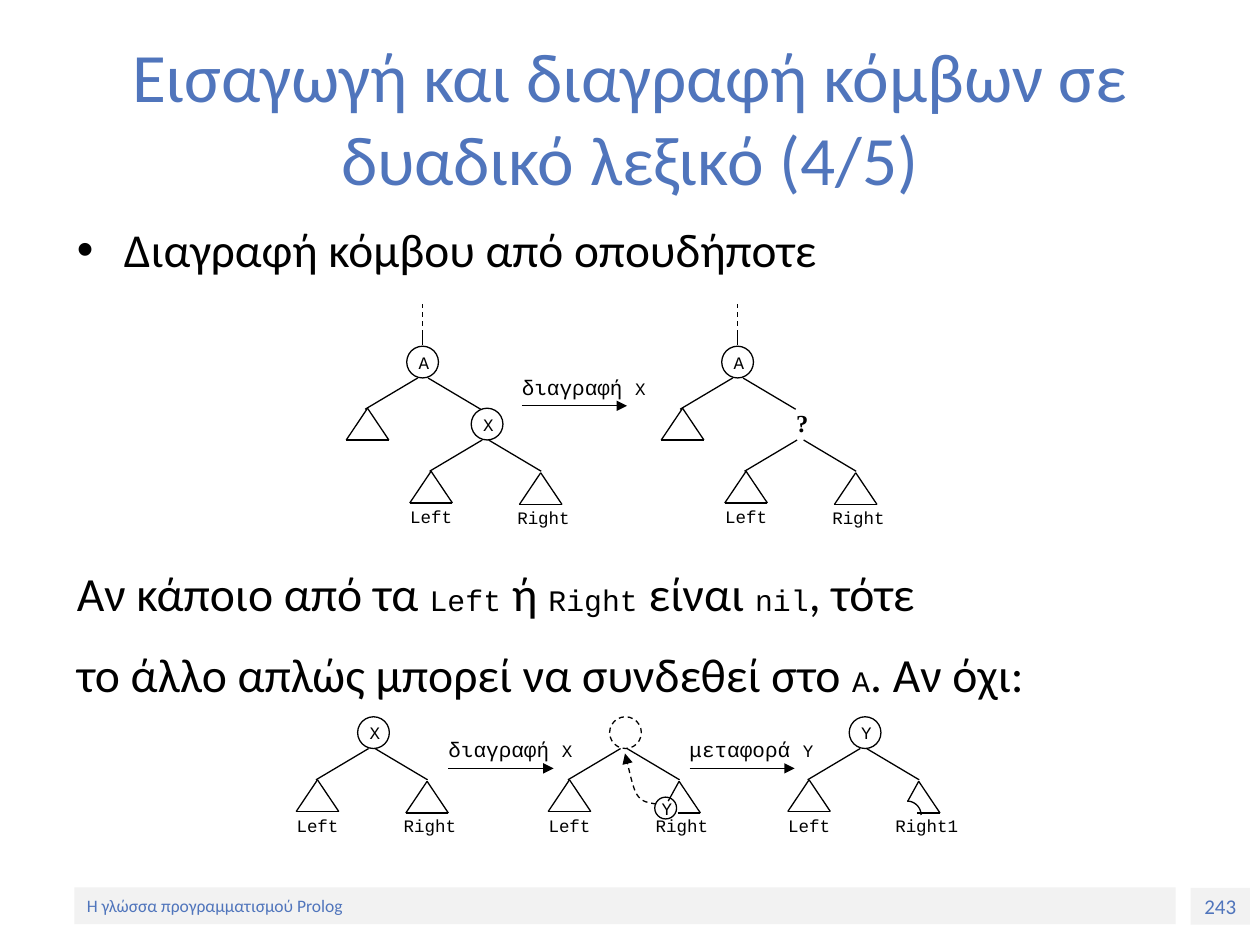
"""Builds the slide on deleting a node from a binary dictionary."""
from lxml.etree import SubElement
from pptx import Presentation
from pptx.dml.color import RGBColor
from pptx.enum.dml import MSO_LINE
from pptx.enum.shapes import MSO_CONNECTOR as Connector, MSO_SHAPE as Shape
from pptx.enum.text import MSO_ANCHOR as Anchor, MSO_AUTO_SIZE as AutoSize, PP_ALIGN as Align
from pptx.oxml.ns import qn
from pptx.util import Cm, Pt

BLACK, BLUE, GREY = "000000", "5075BC", "F2F2F2"
BODY, CODE, SERIF = "Calibri", "Courier New", "Times New Roman"
RADIUS = 0.32


def color(value):
    """Turn a hex string into a colour."""
    return RGBColor.from_string(value)


def add_runs(para, runs, ink=BLACK, bold=False):
    """Add (text, font, size) runs to a paragraph."""
    for words, font, size in runs:
        span = para.add_run()
        span.text = words
        span.font.name, span.font.size, span.font.bold = font, Pt(size), bold
        span.font.color.rgb = color(ink)


def add_text(page, area, *paragraphs, ink=BLACK, bold=False, anchor=Anchor.TOP,
             align=Align.LEFT, gap=0, grow=False):
    """Add a text box holding one list of runs per paragraph."""
    frame = page.shapes.add_textbox(*map(Cm, area)).text_frame
    frame.word_wrap = True
    frame.vertical_anchor = anchor
    if grow:
        frame.auto_size = AutoSize.SHAPE_TO_FIT_TEXT
    for index, runs in enumerate(paragraphs):
        para = frame.add_paragraph() if index else frame.paragraphs[0]
        para.alignment = align
        if index:
            para.space_before = Pt(gap)
        add_runs(para, runs, ink, bold)
    return frame


def add_bullet(para, indent):
    """Give a paragraph a hanging round bullet."""
    props = para._p.get_or_add_pPr()
    props.set("marL", str(Cm(indent)))
    props.set("indent", str(-Cm(indent)))
    SubElement(props, qn("a:buFont")).set("typeface", "Arial")
    SubElement(props, qn("a:buChar")).set("char", "•")


def add_bar(page, area, words, size, align):
    """Add a grey footer bar with blue text."""
    bar = page.shapes.add_shape(Shape.RECTANGLE, *map(Cm, area))
    bar.shadow.inherit = False
    bar.fill.solid()
    bar.fill.fore_color.rgb = color(GREY)
    bar.line.fill.background()
    frame = bar.text_frame
    frame.word_wrap = False
    frame.vertical_anchor = Anchor.MIDDLE
    frame.paragraphs[0].alignment = align
    add_runs(frame.paragraphs[0], [(words, BODY, size)], BLUE)


def draw_stroke(shape, dashed=False, arrow=False):
    """Style the thin black line of a shape or connector."""
    shape.line.color.rgb = color(BLACK)
    shape.line.width = Pt(0.75)
    if dashed:
        shape.line.dash_style = MSO_LINE.DASH
    if arrow:
        SubElement(shape.line._get_or_add_ln(), qn("a:tailEnd")).set("type", "triangle")


def add_line(page, start, end, dashed=False, arrow=False):
    """Add a straight line between two points."""
    line = page.shapes.add_connector(Connector.STRAIGHT, *map(Cm, (*start, *end)))
    draw_stroke(line, dashed, arrow)
    SubElement(line._element.spPr, qn("a:effectLst"))


def add_curve(page, start, *pieces, dashed=False, arrow=False, steps=12):
    """Add an open curve made of cubic pieces."""
    points = []
    first = start
    for piece in pieces:
        for step in range(1, steps + 1):
            t = step / steps
            weights = ((1 - t) ** 3, 3 * t * (1 - t) ** 2, 3 * t * t * (1 - t), t ** 3)
            points.append(tuple(Cm(sum(w * point[axis] for w, point in zip(weights, (first, *piece))))
                                for axis in (0, 1)))
        first = piece[-1]
    builder = page.shapes.build_freeform(Cm(start[0]), Cm(start[1]))
    builder.add_line_segments(points, close=False)
    curve = builder.convert_to_shape()
    curve.shadow.inherit = False
    curve.fill.background()
    draw_stroke(curve, dashed, arrow)


def add_label(page, x, y, words):
    """Add a small code label."""
    add_text(page, (x, y, 2.2, 0.69), [(words, CODE, 10)], grow=True)


def add_node(page, x, y, letter="", radius=RADIUS, dashed=False):
    """Add a circle centred on a point, with its letter."""
    node = page.shapes.add_shape(Shape.OVAL, *map(Cm, (x - radius, y - radius, 2 * radius, 2 * radius)))
    node.shadow.inherit = False
    node.fill.background()
    draw_stroke(node, dashed)
    if letter:
        add_text(page, (x - 0.33, y - 0.33, 0.84, 0.69), [(letter, CODE, 10)], grow=True)


def add_subtree(page, x, y, cut=False):
    """Add a triangle below its apex; a cut one lacks its left corner."""
    bottom = y + 0.64
    add_line(page, (x, y), (x - 0.22, y + 0.4) if cut else (x - 0.43, bottom))
    add_line(page, (x, y), (x + 0.43, bottom))
    add_line(page, (x - 0.03 if cut else x - 0.43, bottom), (x + 0.43, bottom))


def add_branches(page, x, y, offset=0.03):
    """Add the two branches below a node."""
    add_line(page, (x - 0.1, y + RADIUS), (x - 1.16, y + 0.95))
    add_line(page, (x + offset, y + RADIUS), (x + offset + 1.06, y + 0.95))


def add_children(page, x, y, right="Right", cut=False):
    """Add branches with labelled left and right subtrees."""
    add_branches(page, x, y)
    add_subtree(page, x - 1.13, y + 0.95)
    add_label(page, x - 1.8, y + 1.53, "Left")
    add_subtree(page, x + 1.08, y + 0.98, cut)
    add_label(page, x + 0.36, y + 1.54, right)


def add_parent(page, x, y):
    """Add node A with its stem, branches and left subtree."""
    add_line(page, (x, y - 0.34), (x, y - 0.55))
    add_line(page, (x, y - 0.55), (x, y - 1.18), dashed=True)
    add_node(page, x, y, "A")
    add_branches(page, x, y, 0.11)
    add_subtree(page, x - 1.11, y + 0.93)


def add_step(page, x, y, action, letter):
    """Add an arrow with the action written above it."""
    add_line(page, (x, y), (x + 2.12, y), arrow=True)
    add_text(page, (x - 0.25, y - 0.76, 3.5, 0.76),
             [(action + " ", CODE, 12), (letter, CODE, 10)], grow=True)


def add_deletion(page):
    """Draw the deletion of X below A."""
    for x in (8.52, 14.87):
        add_parent(page, x, 7.3)
        add_children(page, x + 1.3, 8.55)
    add_node(page, 9.82, 8.55, "X")
    add_text(page, (15.8, 8.1, 0.84, 0.84), [("?", SERIF, 14)], bold=True, grow=True)
    add_step(page, 10.52, 8.18, "διαγραφή", "X")


def add_replacement(page):
    """Draw the move of Y into the place of X."""
    y = 14.77
    for x, letter, right in ((7.53, "X", "Right"), (12.61, "", "Right"), (17.44, "Y", "Right1")):
        add_node(page, x, y, letter, dashed=not letter)
        add_children(page, x, y, right, cut=letter != "X")
    add_node(page, 13.42, 16.29, "Y", radius=0.22)
    add_step(page, 9.04, 15.49, "διαγραφή", "X")
    add_step(page, 13.9, 15.49, "μεταφορά", "Y")
    add_curve(page, (13.23, 16.21), ((13.08, 16.18), (12.93, 16.18), (12.83, 16)),
              ((12.73, 15.82), (12.65, 15.34), (12.6, 15.19)), dashed=True, arrow=True)
    add_curve(page, (18.29, 16.15), ((18.44, 16.15), (18.57, 16.28), (18.57, 16.43)))


def main():
    """Build and save the slide."""
    deck = Presentation()
    deck.slide_width, deck.slide_height = Cm(25.4), Cm(19.05)
    page = deck.slides.add_slide(deck.slide_layouts[6])
    add_bar(page, (24, 17.9, 1.2, 0.74), "243", 12, Align.CENTER)
    add_bar(page, (1.5, 17.89, 22.2, 0.74), "Η γλώσσα προγραμματισμού Prolog", 10, Align.LEFT)
    add_text(page, (1.27, 0.76, 22.86, 3.18),
             [("Εισαγωγή και διαγραφή κόμβων σε δυαδικό λεξικό (4/5)", BODY, 39.6)],
             ink=BLUE, anchor=Anchor.MIDDLE, align=Align.CENTER)
    frame = add_text(page, (1.3, 4.32, 22.86, 1.8), [("Διαγραφή κόμβου από οπουδήποτε", BODY, 27)])
    add_bullet(frame.paragraphs[0], 0.95)
    add_deletion(page)
    add_text(page, (1.3, 11.25, 22.43, 2.82),
             [("Αν κάποιο από τα ", BODY, 27.2), ("Left", CODE, 17), (" ή ", BODY, 27.2),
              ("Right", CODE, 17), (" είναι ", BODY, 27.2), ("nil", CODE, 17), (", τότε", BODY, 27.2)],
             [("το άλλο απλώς μπορεί να συνδεθεί στο ", BODY, 27.2), ("A", CODE, 17),
              (". Αν όχι:", BODY, 27.2)], gap=13.3)
    add_replacement(page)
    deck.save("out.pptx")


if __name__ == "__main__":
    main()
